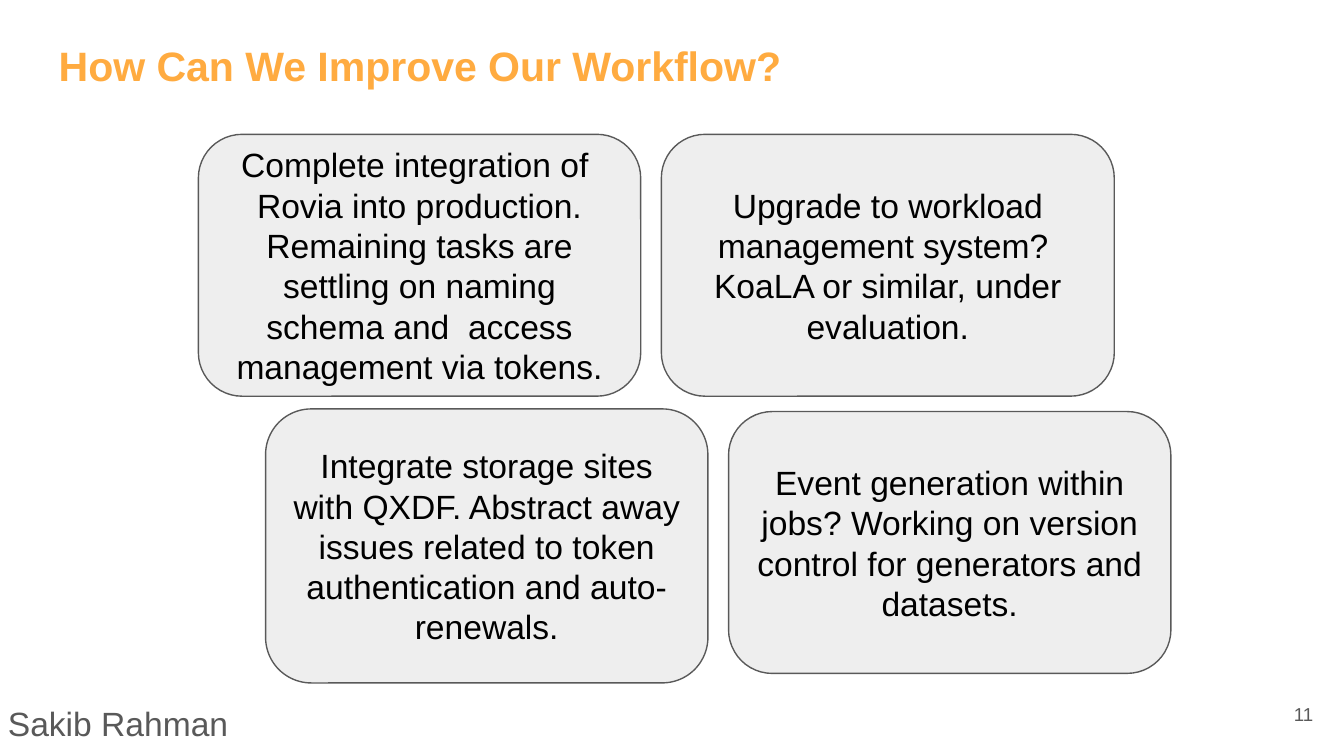
from pptx import Presentation
from pptx.dml.color import RGBColor
from pptx.enum.shapes import MSO_SHAPE
from pptx.enum.text import MSO_ANCHOR, PP_ALIGN
from pptx.util import Cm, Pt

TITLE = "How Can We Improve Our Workflow?"
TITLE_AREA = (0.86, 0.51, 23.67, 1.6)
IDEAS = [
    ("Complete integration of  Rovia into production. Remaining tasks are settling "
     "on naming schema and  access management via tokens.", (3.75, 2.54, 8.36, 4.95)),
    ("Upgrade to workload management system?  KoaLA or similar, under evaluation.",
     (12.5, 2.54, 8.56, 4.95)),
    ("Integrate storage sites with QXDF. Abstract away issues related to token "
     "authentication and auto-renewals.", (5.02, 7.73, 8.36, 5.18)),
    ("Event generation within jobs? Working on version control for generators "
     "and datasets.", (13.77, 7.78, 8.36, 4.95)),
]
PAGE_NUMBER = ("11", (23.55, 12.95, 1.52, 1.09))
AUTHOR = ("Sakib Rahman", (-0.1, 13.03, 5.54, 0.84))

MARGIN = Cm(0.25)
FRAME = {"word_wrap": True, "margin_left": MARGIN, "margin_right": MARGIN,
         "margin_top": MARGIN, "margin_bottom": MARGIN}
GREY = "595959"


def color(value):
    return RGBColor.from_string(value)


def set_all(target, values):
    for name, value in values.items():
        setattr(target, name, value)


def lengths(area):
    return [Cm(value) for value in area]


def write(box, text, size, ink, align=PP_ALIGN.LEFT, anchor=MSO_ANCHOR.MIDDLE,
          bold=False, spacing=None):
    frame = box.text_frame
    set_all(frame, {**FRAME, "vertical_anchor": anchor})
    para = frame.paragraphs[0]
    set_all(para, {"alignment": align, "line_spacing": spacing})
    span = para.add_run()
    span.text = text
    set_all(span.font, {"name": "Arial", "size": Pt(size), "bold": bold})
    span.font.color.rgb = color(ink)


def add_title(page):
    box = page.shapes.title
    set_all(box, dict(zip(("left", "top", "width", "height"), lengths(TITLE_AREA))))
    write(box, TITLE, 22, "FFAB40", anchor=MSO_ANCHOR.TOP, bold=True)


def add_idea(page, text, area):
    box = page.shapes.add_shape(MSO_SHAPE.ROUNDED_RECTANGLE, *lengths(area))
    box.shadow.inherit = False
    box.fill.solid()
    box.fill.fore_color.rgb = color("EEEEEE")
    box.line.color.rgb = color(GREY)
    box.line.width = Pt(0.75)
    write(box, text, 18, "000000", PP_ALIGN.CENTER, spacing=Pt(21.6))


def add_label(page, label, size, **style):
    text, area = label
    box = page.shapes.add_textbox(*lengths(area))
    write(box, text, size, GREY, **style)


def main():
    deck = Presentation()
    set_all(deck, {"slide_width": Cm(25.4), "slide_height": Cm(14.29)})
    page = deck.slides.add_slide(deck.slide_layouts[5])
    add_title(page)
    for text, area in IDEAS:
        add_idea(page, text, area)
    add_label(page, PAGE_NUMBER, 10, align=PP_ALIGN.RIGHT)
    add_label(page, AUTHOR, 18, anchor=MSO_ANCHOR.TOP, spacing=Pt(21.6))
    deck.save("out.pptx")


if __name__ == "__main__":
    main()
